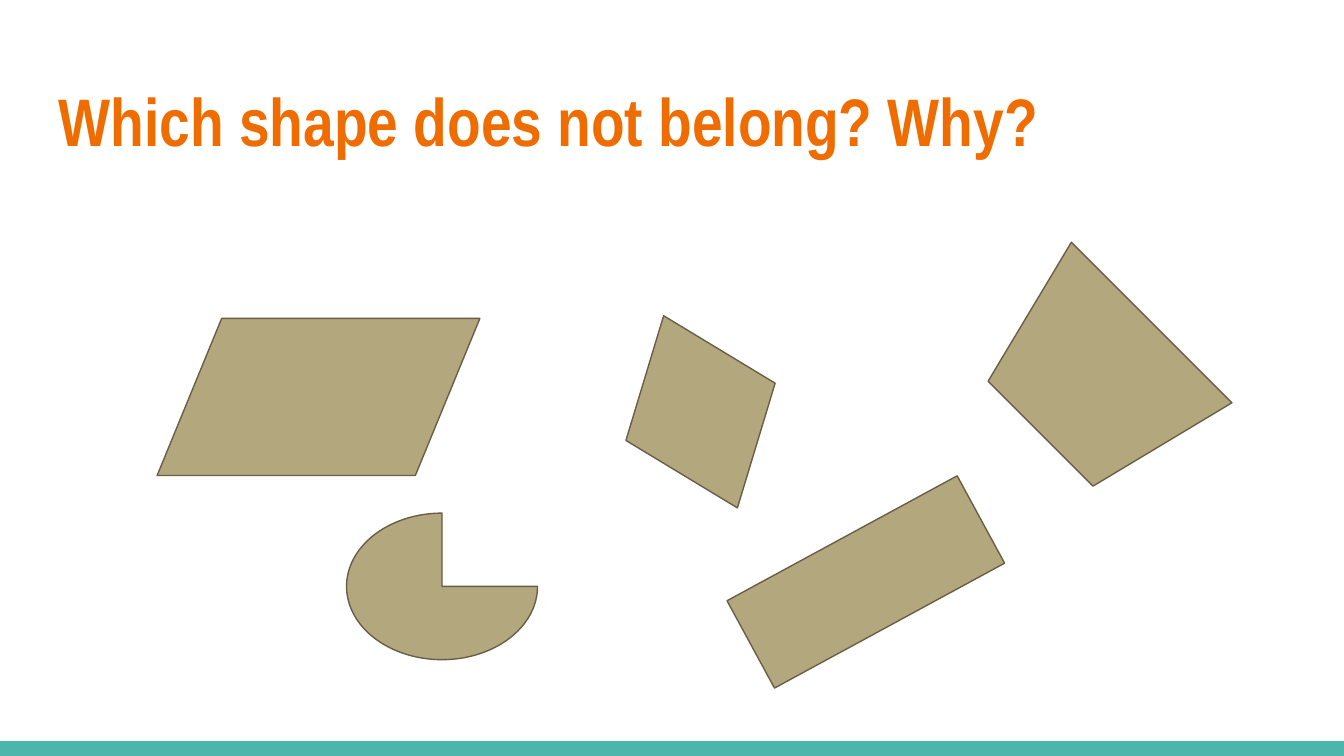
from dataclasses import dataclass

from pptx import Presentation
from pptx.dml.color import RGBColor
from pptx.enum import shapes, text
from pptx.util import Cm, Pt

COLORS = {
    "background": "FFFFFF",
    "title": "EF6C00",
    "bar": "4DB6AC",
    "fill": "B3A77D",
    "outline": "695D46",
}
KIND = shapes.MSO_SHAPE


@dataclass
class Figure:
    """A filled preset shape; lengths in centimetres, rotation in degrees."""
    kind: int
    left: float
    top: float
    width: float
    height: float
    rotation: float = 0
    fill: str = "fill"
    outlined: bool = True


BOTTOM_BAR = Figure(KIND.RECTANGLE, 0, 14.01, 25.4, 0.28, fill="bar", outlined=False)
FIGURES = [
    Figure(KIND.RECTANGLE, 13.89, 10.06, 4.95, 1.88, 331.5),
    Figure(KIND.TRAPEZOID, 18.57, 5.66, 4.29, 2.97, 225),
    Figure(KIND.FLOWCHART_DATA, 2.97, 6.02, 6.1, 2.97),
    Figure(KIND.DIAMOND, 11.73, 5.84, 3.02, 3.89, 339),
    Figure(KIND.PIE, 6.55, 9.7, 3.61, 2.77),
]


def color(name: str) -> RGBColor:
    return RGBColor.from_string(COLORS[name])


def draw_figure(page, figure: Figure) -> None:
    shape = page.shapes.add_shape(
        figure.kind, Cm(figure.left), Cm(figure.top), Cm(figure.width), Cm(figure.height)
    )
    shape.rotation = figure.rotation
    shape.shadow.inherit = False
    shape.fill.solid()
    shape.fill.fore_color.rgb = color(figure.fill)
    if figure.outlined:
        shape.line.color.rgb = color("outline")
        shape.line.width = Pt(0.75)
    else:
        shape.line.fill.background()


def write_title(page, wording: str) -> None:
    title = page.shapes.title
    title.left, title.top, title.width, title.height = Cm(0.86), Cm(1.24), Cm(23.67), Cm(1.96)
    frame = title.text_frame
    frame.text = wording
    frame.word_wrap = True
    frame.auto_size = text.MSO_AUTO_SIZE.NONE
    frame.vertical_anchor = text.MSO_ANCHOR.TOP
    frame.margin_left = frame.margin_right = Cm(0.25)
    frame.margin_top = frame.margin_bottom = Cm(0.25)
    para = frame.paragraphs[0]
    para.alignment = text.PP_ALIGN.LEFT
    font = para.runs[0].font
    font.name = "Arial Narrow"
    font.size = Pt(36)
    font.bold = True
    font.color.rgb = color("title")


def main() -> None:
    deck = Presentation()
    deck.slide_width, deck.slide_height = Cm(25.4), Cm(14.29)
    page = deck.slides.add_slide(deck.slide_layouts.get_by_name("Title Only"))
    page.background.fill.solid()
    page.background.fill.fore_color.rgb = color("background")

    write_title(page, "Which shape does not belong? Why?")
    for figure in [BOTTOM_BAR, *FIGURES]:
        draw_figure(page, figure)
    deck.save("out.pptx")


if __name__ == "__main__":
    main()
